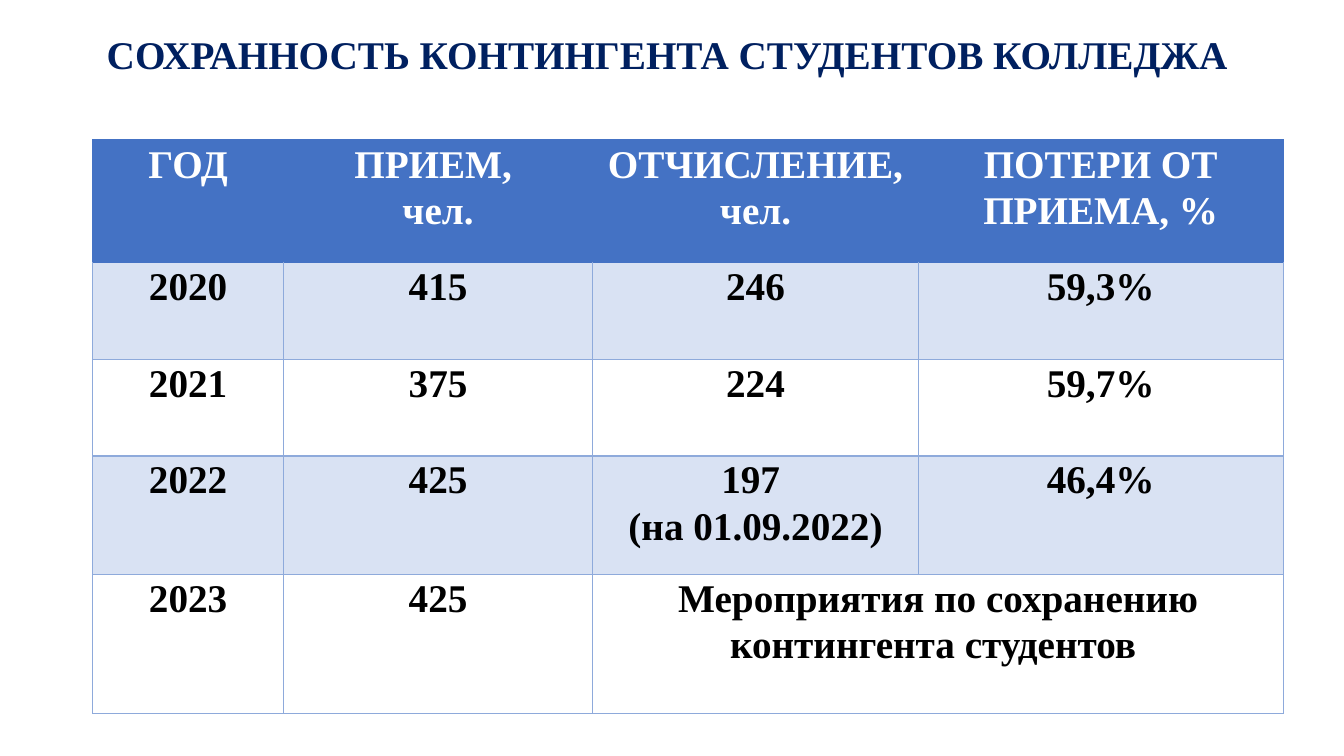
from lxml import etree
from pptx import Presentation
from pptx import util as u
from pptx.dml.color import RGBColor
from pptx.enum import text
from pptx.oxml import ns

COLORS = {
    "title": "002060",
    "header": "4472C4",
    "band": "D9E2F3",
    "border": "8EAADB",
    "white": "FFFFFF",
    "black": "000000",
}
FONT = "Times New Roman"
TITLE = "СОХРАННОСТЬ КОНТИНГЕНТА СТУДЕНТОВ КОЛЛЕДЖА "
ROWS = [
    ["ГОД", "ПРИЕМ, \nчел.", "ОТЧИСЛЕНИЕ, чел.", "ПОТЕРИ ОТ ПРИЕМА, %"],
    ["2020", "415", "246", "59,3%"],
    ["2021", "375", "224", "59,7%"],
    ["2022", "425", "197 \n(на 01.09.2022)", "46,4%"],
    ["2023", "425", "Мероприятия по сохранению контингента студентов ", ""],
]
COL_WIDTHS = [4.8, 7.8, 8.2, 9.2]
ROW_HEIGHTS = [3.08, 2.44, 2.44, 2.98, 3.5]


def write(tf, content, color, spacing):
    """Fill a text frame with centred bold paragraphs, one per line."""
    tf.word_wrap = True
    tf.text = content
    for p in tf.paragraphs:
        p.alignment = text.PP_ALIGN.CENTER
        p.line_spacing = spacing
        p.font.name = FONT
        p.font.size = u.Pt(28)
        p.font.bold = True
        p.font.color.rgb = RGBColor.from_string(COLORS[color])


def set_borders(cell, sides):
    """Draw 1 pt cell borders from a dict of side letter to colour name."""
    tcPr = cell._tc.get_or_add_tcPr()
    for i, side in enumerate("LRTB"):
        ln = etree.Element(ns.qn(f"a:ln{side}"), w=str(u.Pt(1)))
        fill = etree.SubElement(ln, ns.qn("a:solidFill"))
        etree.SubElement(fill, ns.qn("a:srgbClr"), val=COLORS[sides[side]])
        tcPr.insert(i, ln)


def add_title(s, left, top, width, height):
    """Place the slide heading in the given box."""
    tf = s.shapes.add_textbox(u.Cm(left), u.Cm(top), u.Cm(width), u.Cm(height)).text_frame
    tf.vertical_anchor = text.MSO_ANCHOR.MIDDLE
    write(tf, TITLE, "title", 0.9)


def add_retention_table(s, left, top, width, height):
    """Place the table of admissions and losses in the given box."""
    tbl = s.shapes.add_table(len(ROWS), len(COL_WIDTHS), u.Cm(left), u.Cm(top),
                             u.Cm(width), u.Cm(height)).table
    for col, w in zip(tbl.columns, COL_WIDTHS):
        col.width = u.Cm(w * width / sum(COL_WIDTHS))
    for row, h in zip(tbl.rows, ROW_HEIGHTS):
        row.height = u.Cm(h * height / sum(ROW_HEIGHTS))
    for r, values in enumerate(ROWS):
        for c, value in enumerate(values):
            cell = tbl.cell(r, c)
            cell.margin_left = cell.margin_right = u.Cm(0.18)
            cell.margin_top = cell.margin_bottom = 0
            write(cell.text_frame, value, "black" if r else "white", 1.07)
            if r % 2 or r == 0:
                cell.fill.solid()
                fill = "band" if r else "header"
                cell.fill.fore_color.rgb = RGBColor.from_string(COLORS[fill])
            else:
                cell.fill.background()
            sides = dict.fromkeys("LRTB", "border" if r else "header")
            if r == 1:
                sides["T"] = "header"
            set_borders(cell, sides)
    tbl.cell(4, 2).merge(tbl.cell(4, 3))


def main():
    """Build the slide and save it."""
    prs = Presentation()
    prs.slide_width, prs.slide_height = u.Cm(33.87), u.Cm(19.05)
    s = prs.slides.add_slide(prs.slide_layouts[6])
    add_title(s, 2.33, 0.53, 29.21, 1.8)
    add_retention_table(s, 2.34, 3.53, sum(COL_WIDTHS), sum(ROW_HEIGHTS))
    prs.save("out.pptx")


if __name__ == "__main__":
    main()
